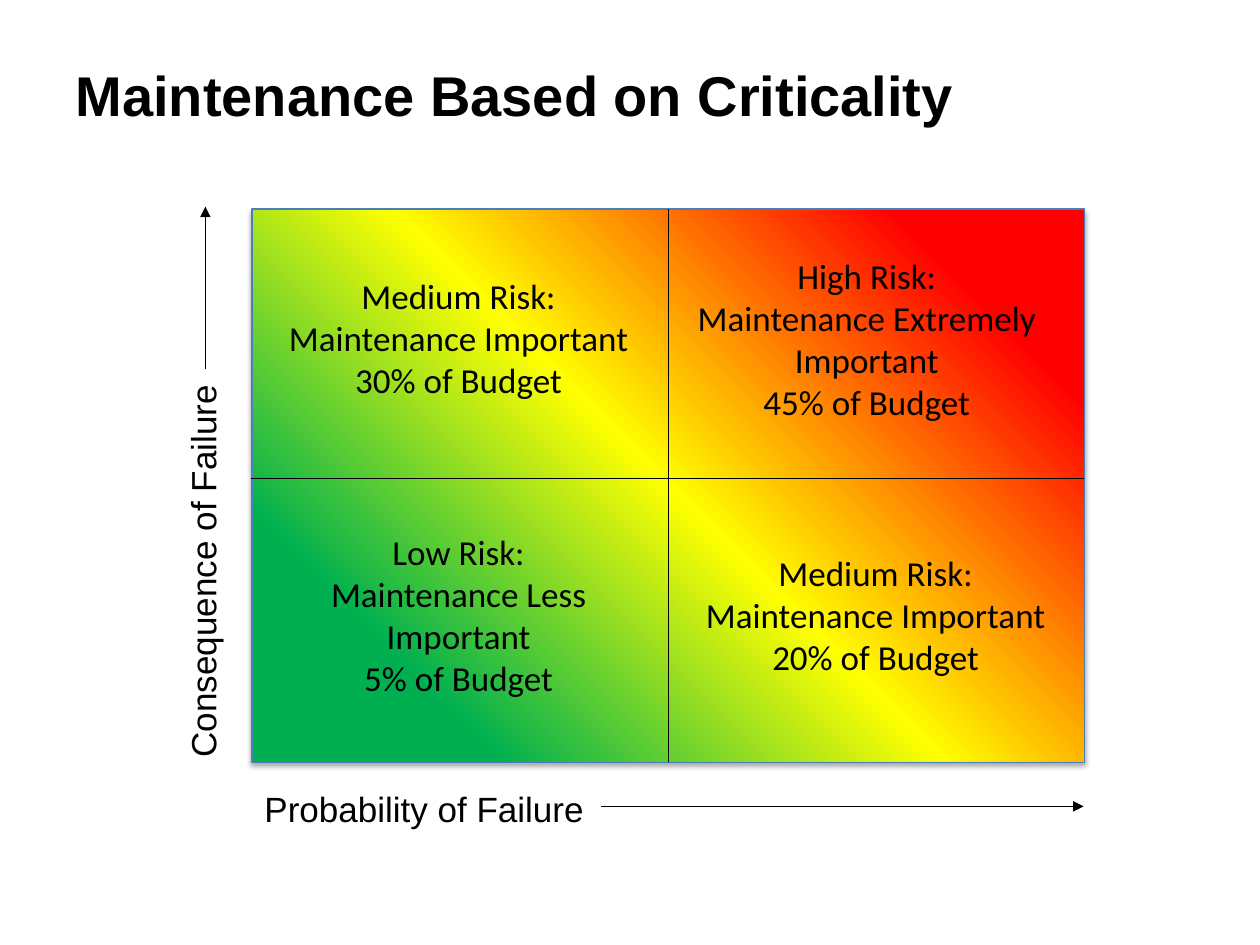
import pptx
import pptx.dml.color
import pptx.enum.shapes
import pptx.enum.text
import pptx.oxml
import pptx.oxml.ns
import pptx.util
from pptx.util import Inches

ALIGN = pptx.enum.text.PP_ALIGN
ANCHOR = pptx.enum.text.MSO_ANCHOR
BLACK = "000000"
NAMESPACE = pptx.oxml.ns.nsdecls("a")


def color(hex_text):
    return pptx.dml.color.RGBColor.from_string(hex_text)


def add_xml(parent, content):
    """Append a DrawingML element, given without its namespace declaration."""
    name, rest = content[1:].split(" ", 1)
    element = pptx.oxml.parse_xml(f"<{name} {NAMESPACE} {rest}")
    parent.append(element)
    return element


class RiskSlide:
    label_font = "Arial"
    zone_font = "Calibri"
    text_size = 20
    title_size = 32
    line_width = 0.75

    def __init__(self, deck):
        self.page = deck.slides.add_slide(deck.slide_layouts[5])

    def format_text(self, box, text, font, size, align, anchor, bold=False):
        frame = box.text_frame
        frame.text = text
        frame.word_wrap = True
        frame.vertical_anchor = anchor
        for paragraph in frame.paragraphs:
            paragraph.alignment = align
            for span in paragraph.runs:
                span.font.name = font
                span.font.size = pptx.util.Pt(size)
                span.font.bold = bold
                span.font.color.rgb = color(BLACK)

    def title(self, text, *bounds):
        box = self.page.shapes.title
        box.left, box.top, box.width, box.height = map(Inches, bounds)
        self.format_text(box, text, self.label_font, self.title_size,
                         ALIGN.LEFT, ANCHOR.MIDDLE, bold=True)

    def axis_label(self, text, *bounds, upward=False):
        box = self.page.shapes.add_textbox(*map(Inches, bounds))
        self.format_text(box, text, self.label_font, self.text_size,
                         ALIGN.LEFT, ANCHOR.TOP)
        if upward:
            box.rotation = 180
            box.text_frame._txBody.bodyPr.set("vert", "eaVert")

    def zone(self, text, *bounds):
        box = self.page.shapes.add_textbox(*map(Inches, bounds))
        self.format_text(box, text, self.zone_font, self.text_size,
                         ALIGN.CENTER, ANCHOR.MIDDLE)

    def line(self, x1, y1, x2, y2, arrow=False):
        connector = self.page.shapes.add_connector(
            pptx.enum.shapes.MSO_CONNECTOR.STRAIGHT,
            *map(Inches, (x1, y1, x2, y2)))
        connector.line.color.rgb = color(BLACK)
        connector.line.width = pptx.util.Pt(self.line_width)
        if arrow:
            add_xml(connector.line._get_or_add_ln(), '<a:tailEnd type="triangle"/>')
        add_xml(connector._element.spPr, "<a:effectLst />")
        return connector

    def heat_map(self, stops, *bounds):
        """Add a rectangle shaded from its lower left to its upper right corner."""
        area = self.page.shapes.add_shape(
            pptx.enum.shapes.MSO_SHAPE.RECTANGLE, *map(Inches, bounds))
        area.fill.gradient()
        area.fill.gradient_angle = 45
        stop_list = area._element.spPr.find(".//" + pptx.oxml.ns.qn("a:gsLst"))
        for stop in list(stop_list):
            stop_list.remove(stop)
        for percent, shade in stops:
            add_xml(stop_list, f'<a:gs pos="{percent * 1000}">'
                               f'<a:srgbClr val="{shade}"/></a:gs>')
        area.line.color.rgb = color("4B7EBC")
        area.line.width = pptx.util.Pt(self.line_width)
        area.shadow.inherit = False
        effects = area._element.spPr.find(pptx.oxml.ns.qn("a:effectLst"))
        add_xml(effects, f'<a:outerShdw blurRad="{pptx.util.Pt(3.1)}" '
                         f'dist="{pptx.util.Pt(1.8)}" dir="5400000" rotWithShape="0">'
                         f'<a:srgbClr val="{BLACK}"><a:alpha val="35000"/>'
                         '</a:srgbClr></a:outerShdw>')
        return area


def main():
    deck = pptx.Presentation()
    deck.slide_width, deck.slide_height = Inches(10), Inches(7.5)
    slide = RiskSlide(deck)
    slide.title("Maintenance Based on Criticality", 0.5, 0.12, 9, 1.25)

    slide.line(1.63, 2.93, 1.63, 1.64, arrow=True)
    slide.axis_label("Consequence of Failure", 1.39, 2.93, 0.54, 3.18, upward=True)
    slide.line(4.77, 6.4, 8.6, 6.4, arrow=True)
    slide.axis_label("Probability of Failure", 2, 6.2, 2.88, 0.44)

    area = slide.heat_map([(18, "00B050"), (50, "FFFF00"), (86, "FF0000")],
                          2, 1.66, 6.61, 4.39)
    divider = slide.line(5.31, 1.66, 5.31, 6.05)
    divider.begin_connect(area, 0)
    divider.end_connect(area, 2)
    slide.line(1.99, 3.8, 8.6, 3.8)

    zones = [
        ("Medium Risk:\nMaintenance Important 30% of Budget", 1.99, 2.12, 1.11),
        ("High Risk:\nMaintenance Extremely Important\n45% of Budget", 5.23, 1.96, 1.45),
        ("Low Risk:\nMaintenance Less Important\n5% of Budget", 1.99, 4.15, 1.45),
        ("Medium Risk:\nMaintenance Important\n20% of Budget", 5.3, 4.32, 1.11),
    ]
    for text, left, top, height in zones:
        slide.zone(text, left, top, 3.3, height)

    deck.save("out.pptx")


if __name__ == "__main__":
    main()
